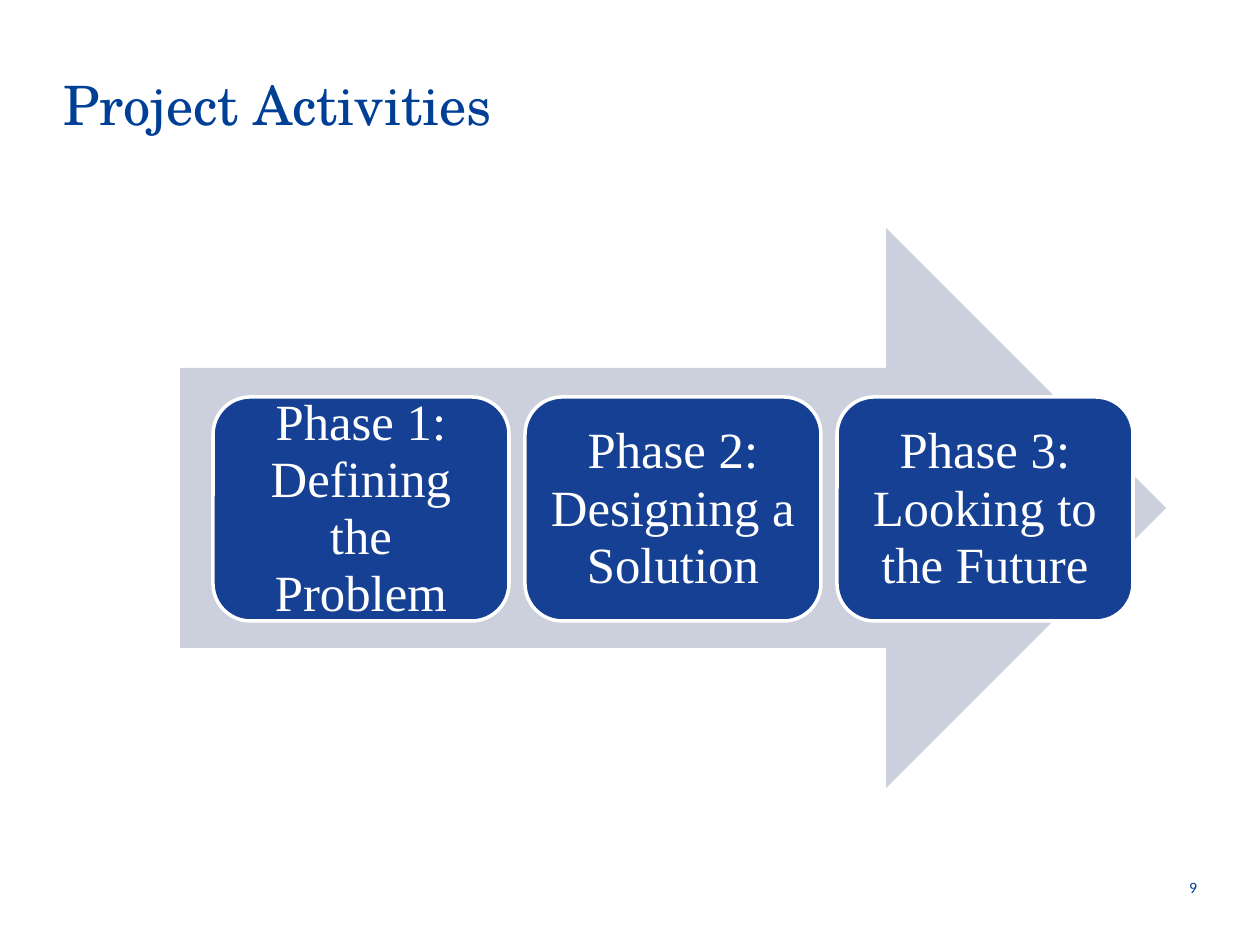
from pptx import Presentation
from pptx.dml.color import RGBColor
from pptx.enum.shapes import MSO_SHAPE as Shape
from pptx.enum.text import MSO_ANCHOR as Anchor, PP_ALIGN as Align
from pptx.util import Emu, Pt

PX_PER_INCH = 126
WHITE = RGBColor(0xFF, 0xFF, 0xFF)
TITLE_BLUE = RGBColor(0x00, 0x3F, 0x96)
PHASE_BLUE = RGBColor(0x16, 0x40, 0x94)
ARROW_GREY = RGBColor(0xCC, 0xCF, 0xDC)

PHASES = [
    "Phase 1: Defining the Problem",
    "Phase 2: Designing a Solution",
    "Phase 3: Looking to the Future",
]
PHASE_LEFT, PHASE_TOP = 213, 397
PHASE_WIDTH, PHASE_HEIGHT = 296, 224
PHASE_STEP = 312


def px(length):
    return Emu(round(length * 914400 / PX_PER_INCH))


def set_text(box, text, font, size, color, align, anchor, inset_x=0, inset_y=0):
    frame = box.text_frame
    frame.word_wrap = True
    frame.vertical_anchor = anchor
    frame.margin_left = frame.margin_right = px(inset_x)
    frame.margin_top = frame.margin_bottom = px(inset_y)
    para = frame.paragraphs[0]
    para.text = text
    para.alignment = align
    para.font.name = font
    para.font.size = Pt(size)
    para.font.color.rgb = color
    return para


def add_title(page, text):
    title = page.shapes.title
    title.left, title.top, title.width, title.height = map(px, (63, 38, 1134, 98))
    set_text(title, text, "TeX Gyre Schola", 31, TITLE_BLUE, Align.LEFT, Anchor.BOTTOM)


def add_page_number(page, number):
    box = page.shapes.add_textbox(*map(px, (1166, 872, 31, 50)))
    set_text(box, number, "Calibri", 9, TITLE_BLUE, Align.RIGHT, Anchor.TOP, inset_y=6)


def add_filled_shape(page, kind, bounds, color):
    shape = page.shapes.add_shape(kind, *map(px, bounds))
    shape.shadow.inherit = False
    shape.fill.solid()
    shape.fill.fore_color.rgb = color
    shape.line.fill.background()
    return shape


def add_phase(page, index, text):
    left = PHASE_LEFT + index * PHASE_STEP
    bounds = (left, PHASE_TOP, PHASE_WIDTH, PHASE_HEIGHT)
    box = add_filled_shape(page, Shape.ROUNDED_RECTANGLE, bounds, PHASE_BLUE)
    box.line.color.rgb = WHITE
    box.line.width = Pt(2)
    para = set_text(box, text, "Times New Roman", 29, WHITE,
                    Align.CENTER, Anchor.MIDDLE, inset_x=15, inset_y=15)
    para.line_spacing = 0.94


def main():
    deck = Presentation()
    deck.slide_width, deck.slide_height = px(1260), px(945)
    page = deck.slides.add_slide(deck.slide_layouts[5])
    add_page_number(page, "9")
    add_title(page, "Project Activities")
    add_filled_shape(page, Shape.RIGHT_ARROW, (180, 228, 986, 560), ARROW_GREY)
    for index, text in enumerate(PHASES):
        add_phase(page, index, text)
    deck.save("out.pptx")


if __name__ == "__main__":
    main()
